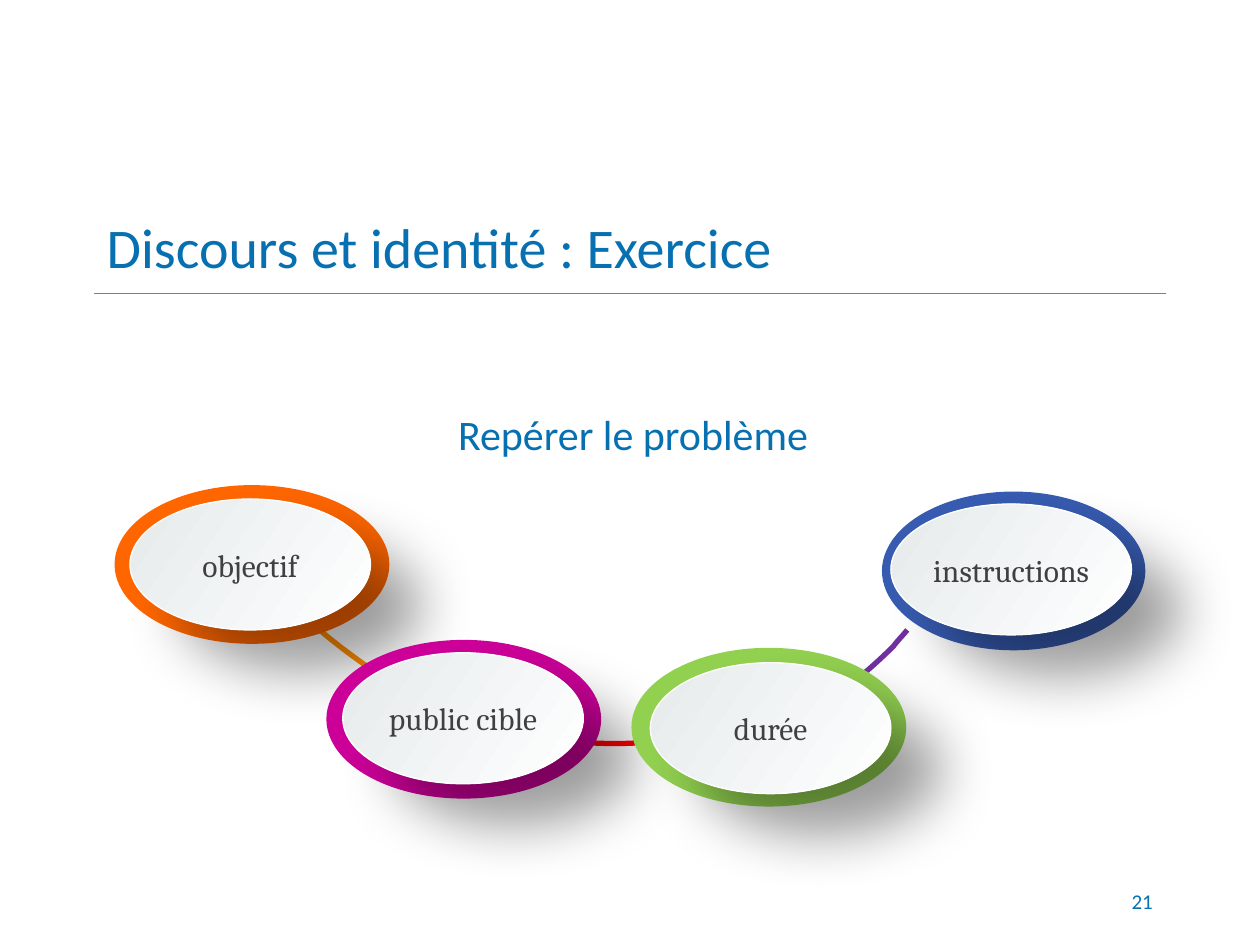
from dataclasses import dataclass

from lxml.etree import SubElement
from pptx import Presentation
from pptx.dml.color import RGBColor
from pptx.enum.shapes import MSO_CONNECTOR, MSO_SHAPE
from pptx.enum.text import MSO_ANCHOR, MSO_AUTO_SIZE, PP_ALIGN
from pptx.oxml.ns import qn
from pptx.util import Cm, Pt

BLUE = "0770B1"
Point = tuple[float, float]


@dataclass
class Bubble:
    text: str
    color: str
    outer: Point
    inner: Point
    width: float = 5.54


@dataclass
class Curve:
    """A chain of cubic Bézier segments: a start, then three points each."""
    color: str
    points: list[Point]


LINKS = [
    Curve("7030A0", [(18.29, 12.7), (18.21, 12.8), (18.11, 12.9), (18.01, 13.03),
                     (17.68, 13.36), (17.32, 13.67), (16.97, 13.94)]),
    Curve("7030A0", [(16.97, 13.94), (16.51, 14.25), (16.03, 14.5), (15.52, 14.71)]),
    Curve("FF0000", [(11.4, 14.94), (11.96, 14.99), (12.52, 15.01), (13.06, 14.96),
                     (13.36, 14.96), (13.64, 14.91), (13.92, 14.88)]),
    Curve("FF8A00", [(6.27, 12.55), (6.81, 13.03), (7.47, 13.51), (8.18, 13.94)]),
]
BUBBLES = [
    Bubble("instructions", "375BB0", (17.78, 9.91), (17.96, 10.16), 5.31),
    Bubble("objectif", "FF6600", (2.31, 9.78), (2.62, 10.06)),
    Bubble("public cible", "CC0099", (6.58, 12.9), (6.91, 13.16)),
    Bubble("durée", "92D050", (12.73, 13.06), (13.11, 13.36)),
]


def rgb(code: str) -> RGBColor:
    return RGBColor.from_string(code)


def write(shape, text: str, size: float, color: str = BLUE, font: str = "Calibri",
          align=PP_ALIGN.LEFT, anchor=MSO_ANCHOR.MIDDLE, inset: Point = (0.25, 0.13),
          spacing: float = 1.0, after: float = 0) -> None:
    frame = shape.text_frame
    frame.word_wrap = True
    frame.auto_size = MSO_AUTO_SIZE.NONE
    frame.vertical_anchor = anchor
    frame.margin_left = frame.margin_right = Cm(inset[0])
    frame.margin_top = frame.margin_bottom = Cm(inset[1])
    para = frame.paragraphs[0]
    para.alignment = align
    para.line_spacing = spacing
    para.space_after = Pt(after)
    run = para.add_run()
    run.text = text
    run.font.name = font
    run.font.size = Pt(size)
    run.font.color.rgb = rgb(color)


def label(slide, box: tuple[float, float, float, float], text: str, size: float, **style) -> None:
    write(slide.shapes.add_textbox(*map(Cm, box)), text, size, **style)


def cast(shape) -> None:
    """Add a soft black shadow towards the lower right."""
    effects = SubElement(shape._element.spPr, qn("a:effectLst"))
    shadow = SubElement(effects, qn("a:outerShdw"), blurRad=str(Pt(33)), dist=str(Pt(36.7)),
                        dir=str(39 * 60000), algn="tl", rotWithShape="0")
    tint = SubElement(shadow, qn("a:srgbClr"), val="000000")
    SubElement(tint, qn("a:alpha"), val="38000")


def oval(slide, spot: Point, width: float, height: float):
    shape = slide.shapes.add_shape(MSO_SHAPE.OVAL, *map(Cm, (*spot, width, height)))
    shape.line.fill.background()
    return shape


def draw_bubble(slide, item: Bubble) -> None:
    ring = oval(slide, item.outer, item.width, 3.2)
    ring.shadow.inherit = False
    ring.fill.solid()
    ring.fill.fore_color.rgb = rgb(item.color)

    face = oval(slide, item.inner, 4.85, 2.64)
    face.fill.gradient()
    face.fill.gradient_angle = -35 % 360
    for stop, color in zip(face.fill.gradient_stops, ("E6EAEB", "FFFFFF")):
        stop.color.rgb = rgb(color)
    face.line.color.rgb = rgb("FFFFFF")
    face.line.width = Pt(0)
    cast(face)
    write(face, item.text, 18, color="404040", font="Cambria",
          align=PP_ALIGN.CENTER, inset=(0, 0))


def trace(points: list[Point], steps: int = 12) -> list[Point]:
    """Sample the Bézier chain."""
    path = [points[0]]
    for at in range(0, len(points) - 1, 3):
        part = points[at:at + 4]
        for step in range(1, steps + 1):
            t = step / steps
            mix = ((1 - t) ** 3, 3 * t * (1 - t) ** 2, 3 * t * t * (1 - t), t ** 3)
            path.append((sum(m * x for m, (x, _) in zip(mix, part)),
                         sum(m * y for m, (_, y) in zip(mix, part))))
    return path


def draw_curve(slide, item: Curve) -> None:
    start, *rest = [(Cm(x), Cm(y)) for x, y in trace(item.points)]
    pen = slide.shapes.build_freeform(*start)
    pen.add_line_segments(rest, close=False)
    shape = pen.convert_to_shape()
    shape.shadow.inherit = False
    shape.fill.background()
    shape.line.color.rgb = rgb(item.color)
    shape.line.width = Pt(3)


def draw_rule(slide) -> None:
    rule = slide.shapes.add_connector(MSO_CONNECTOR.STRAIGHT, Cm(1.9), Cm(5.92), Cm(23.5), Cm(5.92))
    rule.line.color.rgb = rgb("0BA7DF")
    rule.line.width = Pt(0.75)
    SubElement(rule._element.spPr, qn("a:effectLst"))


def main() -> None:
    deck = Presentation()
    deck.slide_width, deck.slide_height = Cm(25.4), Cm(19.05)
    slide = deck.slides.add_slide(deck.slide_layouts[5])
    draw_rule(slide)

    title = slide.shapes.title
    title.left, title.top, title.width, title.height = map(Cm, (1.9, 4.01, 21.6, 1.9))
    write(title, "Discours et identité : Exercice", 32)
    label(slide, (18.21, 17.65, 5.28, 1.02), "21", 12, align=PP_ALIGN.RIGHT)

    for link in LINKS:
        draw_curve(slide, link)
    for bubble in BUBBLES:
        draw_bubble(slide, bubble)
    label(slide, (6.58, 7.95, 12.37, 1.42), "Repérer le problème", 24, align=PP_ALIGN.CENTER,
          anchor=MSO_ANCHOR.TOP, spacing=1.15, after=6)
    deck.save("out.pptx")


if __name__ == "__main__":
    main()
